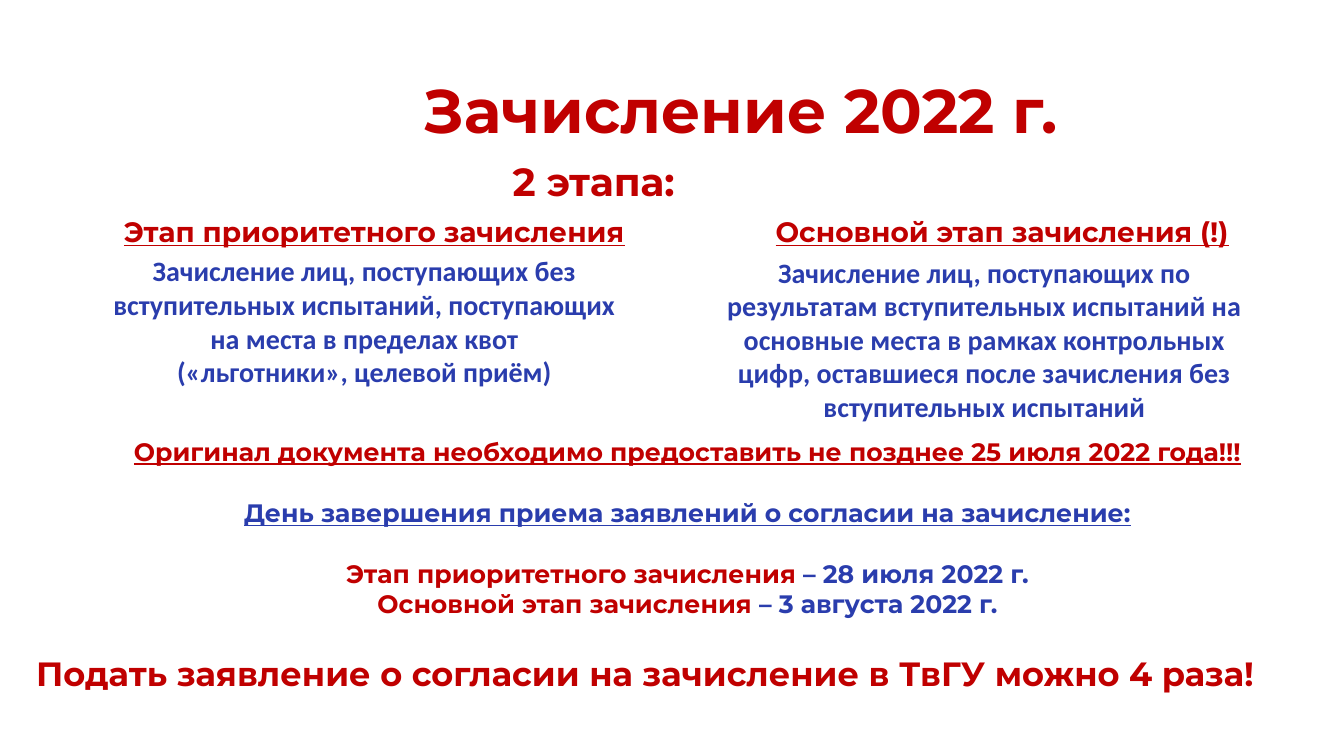
from dataclasses import dataclass

from lxml.etree import SubElement
from pptx import Presentation
from pptx.dml.color import RGBColor
from pptx.enum.shapes import MSO_SHAPE
from pptx.enum.text import MSO_ANCHOR, MSO_AUTO_SIZE, PP_ALIGN
from pptx.oxml.ns import qn
from pptx.util import Inches, Pt


@dataclass(frozen=True)
class Theme:
    """Colours, fonts and type sizes of the slide."""
    red: RGBColor = RGBColor(0xC0, 0x00, 0x00)
    blue: RGBColor = RGBColor(0x2A, 0x3D, 0xAD)
    white: RGBColor = RGBColor(0xFF, 0xFF, 0xFF)
    display: str = "Montserrat"
    plain: str = "Calibri"
    title: int = 44
    subtitle: int = 28
    closing: int = 24
    stage: int = 20
    dates: int = 18


class Composer:
    """Places elements on a grid of 160 columns by 90 rows."""

    def __init__(self, deck, theme):
        """Open a title-only page."""
        self.theme = theme
        self.column = deck.slide_width / 160
        self.row = deck.slide_height / 90
        self.page = deck.slides.add_slide(deck.slide_layouts[5])

    def area(self, left, top, width, height):
        """Turn grid units into lengths."""
        return (round(left * self.column), round(top * self.row),
                round(width * self.column), round(height * self.row))

    def span(self, para, text, size, color, underline=False, font=None):
        """Add one bold run."""
        span = para.add_run()
        span.text = text
        span.font.name = font or self.theme.display
        span.font.size = Pt(size)
        span.font.bold = True
        span.font.underline = underline
        span.font.color.rgb = color

    def paragraph(self, frame, first, align=PP_ALIGN.CENTER, before=0, tab=None):
        """Start a paragraph, with a tab stop if one is given."""
        para = frame.paragraphs[0] if first else frame.add_paragraph()
        if tab:
            stops = SubElement(para._p.get_or_add_pPr(), qn("a:tabLst"))
            SubElement(stops, qn("a:tab"), pos=str(round(tab * self.column)), algn="l")
        para.alignment = align
        para.space_before = Pt(before)
        return para

    def title(self, text, *grid):
        """Fill the title placeholder."""
        box = self.page.shapes.title
        box.left, box.top, box.width, box.height = self.area(*grid)
        frame = box.text_frame
        frame.word_wrap = True
        frame.vertical_anchor = MSO_ANCHOR.MIDDLE
        frame.margin_right = Inches(0.26)
        para = self.paragraph(frame, True)
        para.line_spacing = 0.9
        self.span(para, text, self.theme.title, self.theme.red)

    def text_box(self, *grid, wrap=False):
        """Add a text box and return its frame."""
        frame = self.page.shapes.add_textbox(*self.area(*grid)).text_frame
        frame.word_wrap = wrap
        frame.auto_size = MSO_AUTO_SIZE.NONE if wrap else MSO_AUTO_SIZE.SHAPE_TO_FIT_TEXT
        return frame

    def card(self, texts, *grid, bottom=0.05):
        """Add a white card with centred paragraphs."""
        box = self.page.shapes.add_shape(MSO_SHAPE.RECTANGLE, *self.area(*grid))
        box.shadow.inherit = False
        box.fill.solid()
        box.fill.fore_color.rgb = self.theme.white
        box.line.color.rgb = self.theme.white
        box.line.width = Pt(1)
        frame = box.text_frame
        frame.word_wrap = True
        frame.vertical_anchor = MSO_ANCHOR.MIDDLE
        frame.margin_bottom = Inches(bottom)
        for index, text in enumerate(texts):
            para = self.paragraph(frame, index == 0)
            self.span(para, text, self.theme.stage, self.theme.blue, font=self.theme.plain)


def main():
    """Build the enrolment slide."""
    deck = Presentation()
    deck.slide_width, deck.slide_height = Inches(13.33), Inches(7.5)
    theme = Theme()
    slide = Composer(deck, theme)
    red, blue = theme.red, theme.blue

    slide.title("Зачисление 2022 г.", 29.4, 4.8, 119.5, 17.4)

    stages = slide.text_box(13.56, 18.72, 138, 57.12, wrap=True)
    heading = slide.paragraph(stages, True, PP_ALIGN.LEFT, tab=46.3)
    heading.line_spacing = 0.9
    slide.span(heading, "\t2 этапа:", theme.subtitle, red)
    names = slide.paragraph(stages, False, PP_ALIGN.LEFT, before=10, tab=77.6)
    names.line_spacing = 0.9
    slide.span(names, "Этап приоритетного зачисления", theme.stage, red, True)
    slide.span(names, "\t", theme.stage, red)
    slide.span(names, "Основной этап зачисления (!)", theme.stage, red, True)

    slide.card(["Зачисление лиц, поступающих без вступительных испытаний, "
                "поступающих на места в пределах квот",
                "(«льготники», целевой приём)"],
               11.52, 30.72, 63.72, 19.08, bottom=0.39)
    slide.card(["Зачисление лиц, поступающих по результатам вступительных испытаний "
                "на основные места в рамках контрольных цифр, оставшиеся после "
                "зачисления без вступительных испытаний"],
               85.32, 30.72, 63.72, 19.32)

    closing = slide.text_box(3.12, 77.16, 148.44, 6)
    slide.span(slide.paragraph(closing, True, PP_ALIGN.LEFT),
               "Подать заявление о согласии на зачисление в ТвГУ можно 4 раза!",
               theme.closing, red)

    dates = slide.text_box(14.28, 51.36, 135.12, 23.04)
    lines = [
        (0, [("Оригинал документа необходимо предоставить не позднее 25 июля 2022 года!!!",
              red, True)]),
        (22, [("День завершения приема заявлений о согласии на зачисление:", blue, True)]),
        (22, [("Этап приоритетного зачисления ", red, False),
              ("– 28 июля 2022 г.", blue, False)]),
        (0, [("Основной этап зачисления ", red, False),
             ("– 3 августа 2022 г.", blue, False)]),
    ]
    for index, (before, spans) in enumerate(lines):
        para = slide.paragraph(dates, index == 0, before=before)
        for text, color, underline in spans:
            slide.span(para, text, theme.dates, color, underline)

    deck.save("out.pptx")


if __name__ == "__main__":
    main()
